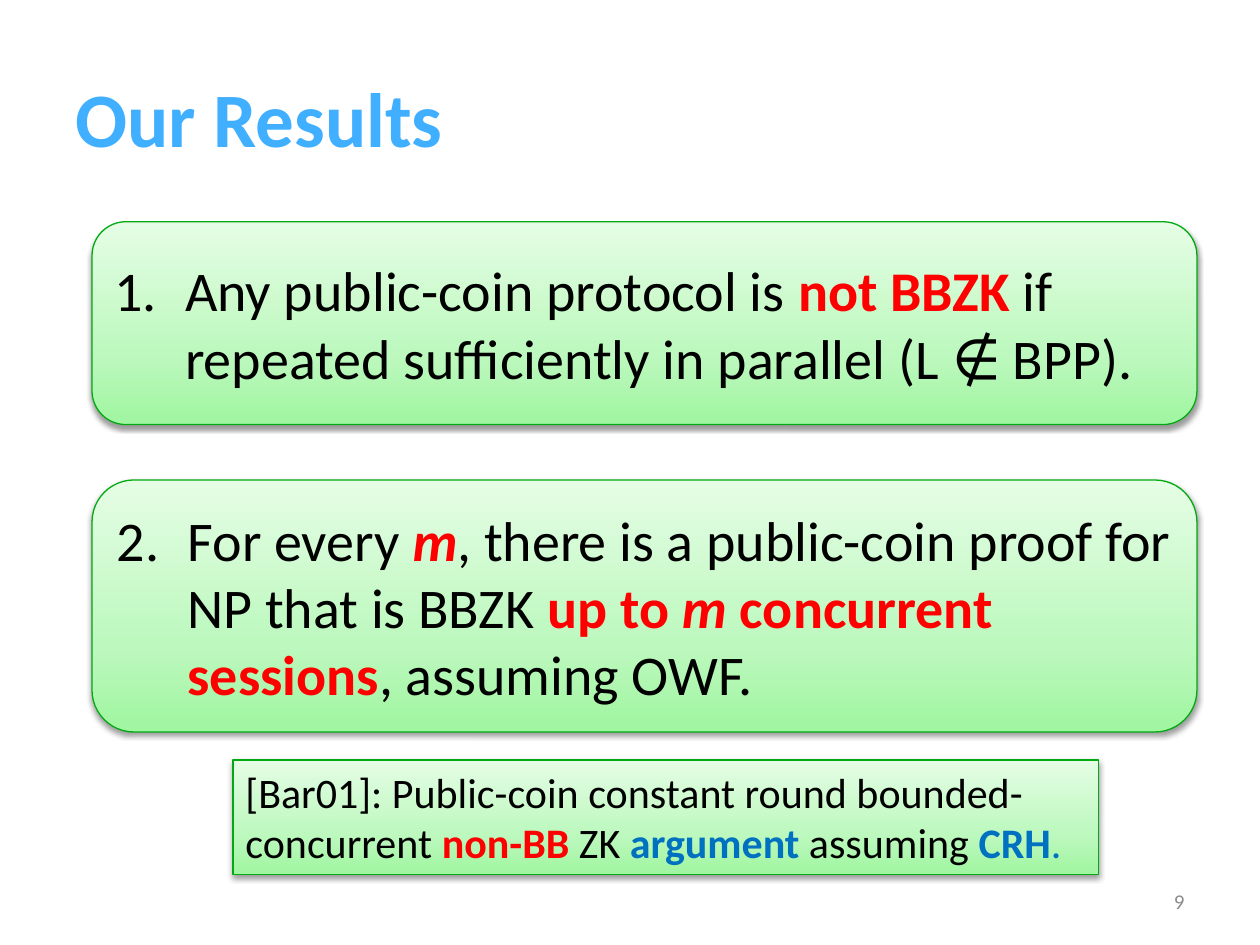
from copy import deepcopy

from lxml import etree
from pptx import Presentation
from pptx.dml.color import RGBColor
from pptx.enum.shapes import MSO_SHAPE
from pptx.enum.text import MSO_ANCHOR, MSO_AUTO_SIZE, PP_ALIGN
from pptx.oxml.ns import qn
from pptx.util import Pt

ROUNDED = MSO_SHAPE.ROUNDED_RECTANGLE
RECTANGLE = MSO_SHAPE.RECTANGLE
MIDDLE = MSO_ANCHOR.MIDDLE
TOP = MSO_ANCHOR.TOP
FIT_SHAPE = MSO_AUTO_SIZE.SHAPE_TO_FIT_TEXT
LEFT = PP_ALIGN.LEFT
RIGHT = PP_ALIGN.RIGHT

FONT = "Calibri"
SKY = RGBColor(0x40, 0xAF, 0xFF)
GREY = RGBColor(0x8C, 0x8C, 0x8C)
BLACK = RGBColor(0, 0, 0)
RED = RGBColor(0xFF, 0, 0)
BLUE = RGBColor(0, 0x70, 0xC0)
GREEN = RGBColor(0x03, 0xA9, 0x12)
GRADIENT = [
    (0, RGBColor(0xA0, 0xF6, 0xA1)),
    (0.35, RGBColor(0xBD, 0xF8, 0xBE)),
    (1, RGBColor(0xE5, 0xFD, 0xE5)),
]

PLAIN = (BLACK, False, False)
KEY = (RED, True, False)
KEY_ITALIC = (RED, True, True)
CONTRAST = (BLUE, True, False)

PANEL_LEFT, PANEL_WIDTH = 52.6, 631.4
HANGING_INDENT = Pt(40.5)

RESULTS = [
    (126.7, 115.9, [
        ("Any public-coin protocol is ", PLAIN),
        ("not BBZK", KEY),
        (" if repeated sufficiently in parallel (L ∉ BPP).", PLAIN),
    ]),
    (274.3, 144, [
        ("For every ", PLAIN),
        ("m", KEY_ITALIC),
        (", there is a public-coin proof for NP that is BBZK ", PLAIN),
        ("up to ", KEY),
        ("m", KEY_ITALIC),
        (" concurrent sessions", KEY),
        (", assuming OWF.", PLAIN),
    ]),
]
PRIOR_WORK = [
    ("[Bar01]: Public-coin constant round bounded-concurrent ", PLAIN),
    ("non-BB", KEY),
    (" ZK ", PLAIN),
    ("argument ", CONTRAST),
    ("assuming ", PLAIN),
    ("CRH", CONTRAST),
    (".", (BLUE, False, False)),
]


def write_spans(frame, spans, size, align=LEFT, anchor=MIDDLE):
    frame.word_wrap = True
    frame.vertical_anchor = anchor
    para = frame.paragraphs[0]
    para.alignment = align
    for text, (color, bold, italic) in spans:
        span = para.add_run()
        span.text = text
        font = span.font
        font.name, font.size = FONT, Pt(size)
        font.bold, font.italic = bold, italic
        font.color.rgb = color
    return para


def add_label(page, box, spans, size, align=LEFT):
    label = page.shapes.add_textbox(*map(Pt, box))
    write_spans(label.text_frame, spans, size, align)


def fill_gradient(shape):
    shape.fill.gradient()
    shape.fill.gradient_angle = 90
    stop_list = shape._element.spPr.find(qn("a:gradFill")).find(qn("a:gsLst"))
    stop_list.append(deepcopy(stop_list[0]))
    for stop, (position, color) in zip(shape.fill.gradient_stops, GRADIENT):
        stop.position = position
        stop.color.rgb = color


def add_shadow(shape):
    shape.shadow.inherit = False
    effects = shape._element.spPr.find(qn("a:effectLst"))
    shadow = etree.SubElement(
        effects, qn("a:outerShdw"), blurRad=str(Pt(3.1)), dist=str(Pt(1.6)),
        dir="5400000", rotWithShape="0")
    color = etree.SubElement(shadow, qn("a:srgbClr"), val="000000")
    etree.SubElement(color, qn("a:alpha"), val="38000")


def add_panel(page, kind, box):
    panel = page.shapes.add_shape(kind, *map(Pt, box))
    fill_gradient(panel)
    panel.line.color.rgb = GREEN
    panel.line.width = Pt(0.75)
    add_shadow(panel)
    return panel


def add_result(page, box, number, spans):
    panel = add_panel(page, ROUNDED, box)
    para = write_spans(panel.text_frame, spans, 32)
    settings = para._p.get_or_add_pPr()
    settings.set("marL", str(HANGING_INDENT))
    settings.set("indent", str(-HANGING_INDENT))
    etree.SubElement(settings, qn("a:buFont"), typeface="+mj-lt")
    etree.SubElement(settings, qn("a:buAutoNum"), type="arabicPeriod",
                     startAt=str(number))


def add_prior_work(page, box):
    panel = add_panel(page, RECTANGLE, box)
    write_spans(panel.text_frame, PRIOR_WORK, 24, anchor=TOP)
    panel.text_frame.auto_size = FIT_SHAPE


def main():
    deck = Presentation()
    deck.slide_width, deck.slide_height = Pt(720), Pt(540)
    page = deck.slides.add_slide(deck.slide_layouts[6])
    add_label(page, (36, 21.6, 648, 90),
              [("Our Results", (SKY, True, False))], 44)
    add_label(page, (516.2, 500.4, 167.8, 28.8),
              [("9", (GREY, False, False))], 12, RIGHT)
    for number, (top, height, spans) in enumerate(RESULTS, 1):
        add_result(page, (PANEL_LEFT, top, PANEL_WIDTH, height), number, spans)
    add_prior_work(page, (133.2, 434.2, 494.6, 65.5))
    deck.save("out.pptx")


if __name__ == "__main__":
    main()
